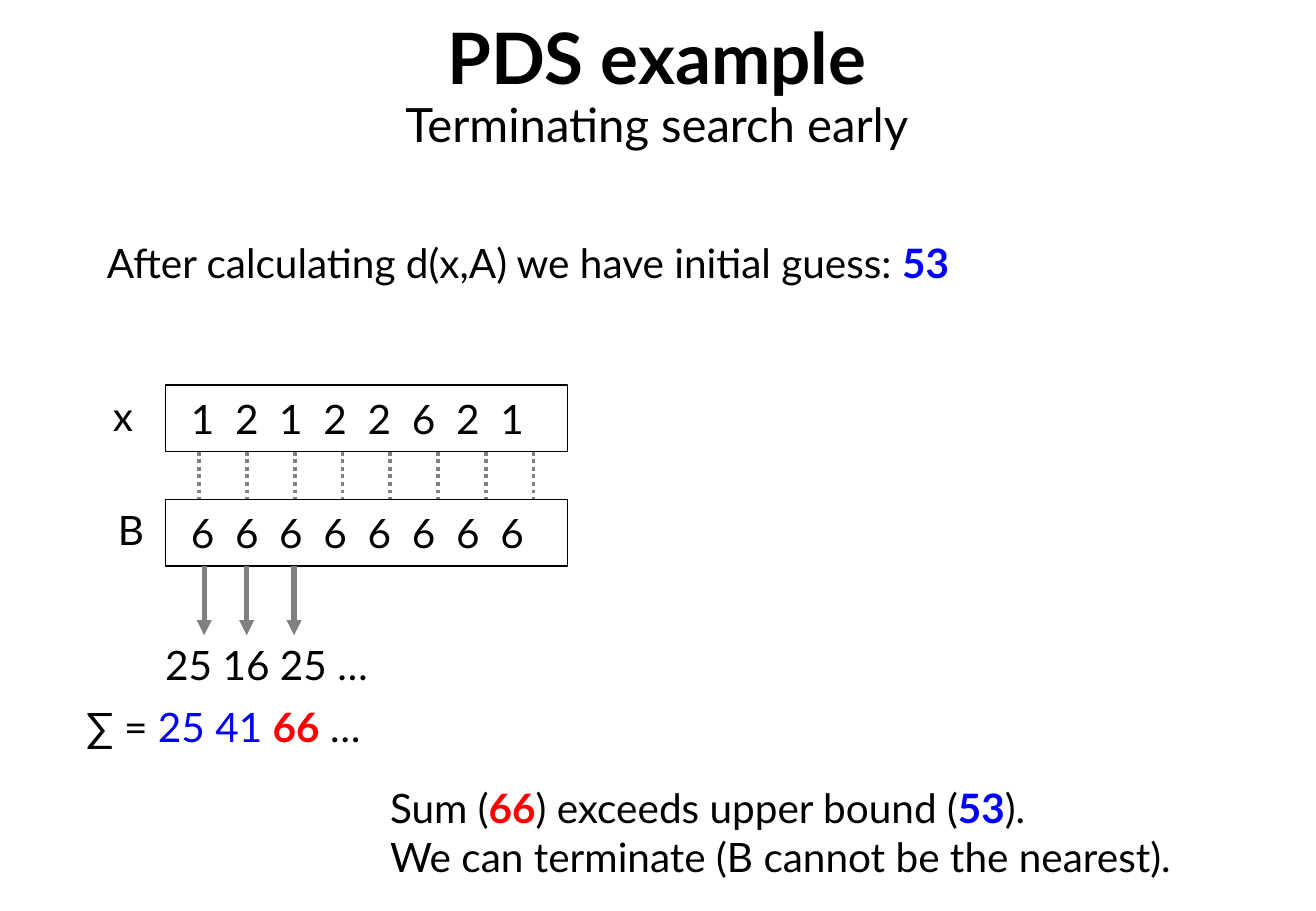
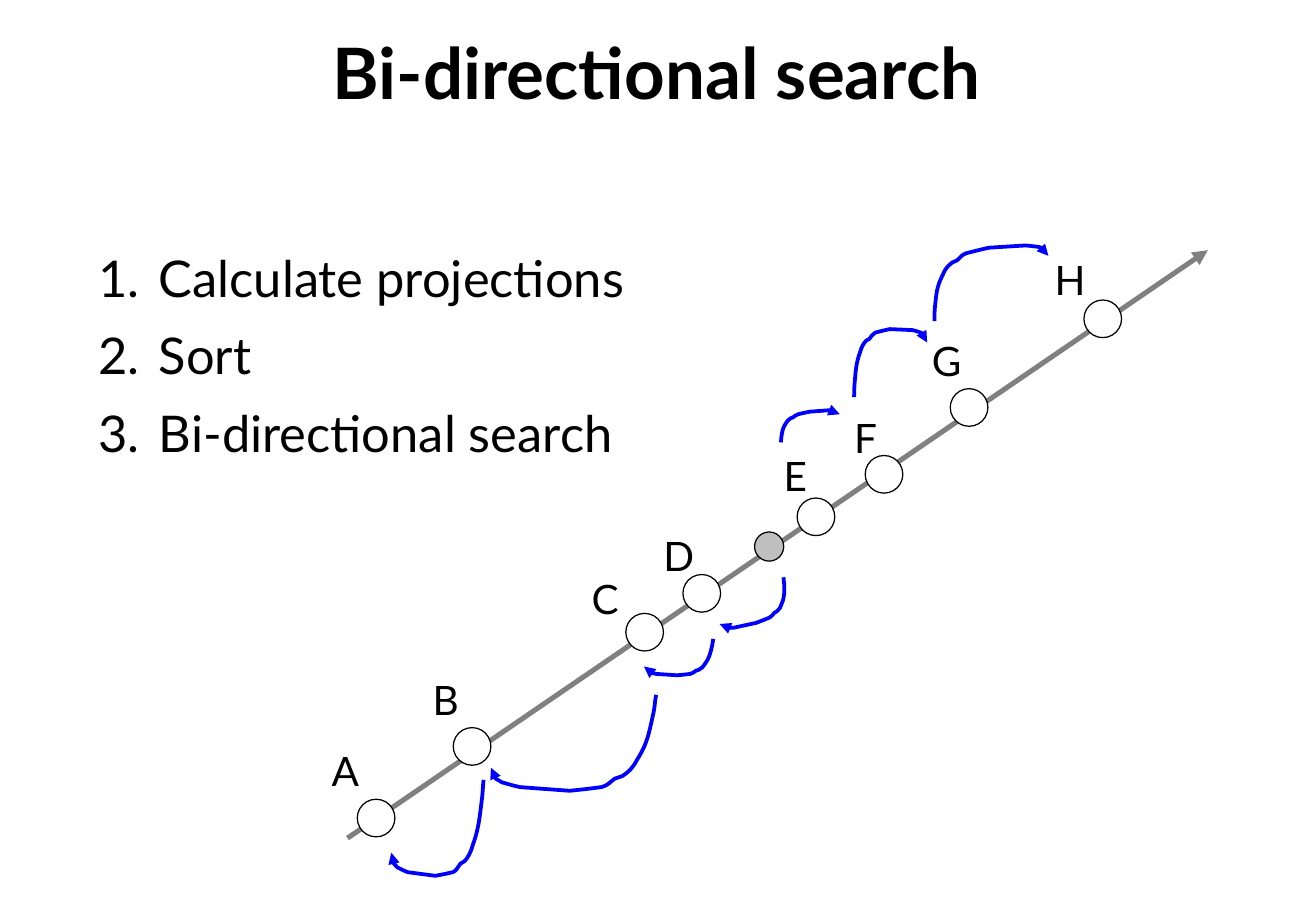
import lxml.etree
import pptx
import pptx.dml.color
import pptx.enum.dml
import pptx.enum.shapes
import pptx.enum.text
import pptx.oxml.ns
import pptx.util

Inches = pptx.util.Inches
Pt = pptx.util.Pt
hue = pptx.dml.color.RGBColor.from_string
qn = pptx.oxml.ns.qn
sub = lxml.etree.SubElement
Shape = pptx.enum.shapes.MSO_SHAPE
Anchor = pptx.enum.text.MSO_ANCHOR
Align = pptx.enum.text.PP_ALIGN
DOTS = pptx.enum.dml.MSO_LINE.ROUND_DOT
STRAIGHT = pptx.enum.shapes.MSO_CONNECTOR.STRAIGHT

FONT = "Lato"
BLACK, WHITE, GRAY, PALE = "000000", "FFFFFF", "808080", "BFBFBF"
BLUE, RED = "0000FF", "FF0000"


def write(box, paras, size=24, bold=False, align=Align.LEFT, anchor=Anchor.TOP,
          inset=(0, 0), space=None, after=0, stops=(), number=False):
    """Each paragraph is a string or a list of (text, format) runs."""
    frame = box.text_frame
    frame.word_wrap = True
    frame.auto_size = pptx.enum.text.MSO_AUTO_SIZE.NONE
    frame.vertical_anchor = anchor
    frame.margin_left = frame.margin_right = Inches(inset[0])
    frame.margin_top = frame.margin_bottom = Inches(inset[1])
    for i, runs in enumerate(paras):
        para = frame.add_paragraph() if i else frame.paragraphs[0]
        para.alignment = align
        para.line_spacing = space
        if i < len(paras) - 1:
            para.space_after = Pt(after)
        for text, form in [(runs, {})] if isinstance(runs, str) else runs:
            if form.get("newline"):
                para.add_line_break()
            run = para.add_run()
            run.text = text
            run.font.name = FONT
            run.font.size = Pt(form.get("size", size))
            run.font.bold = form.get("bold", bold)
            run.font.color.rgb = hue(form.get("color", BLACK))
        props = para._p.get_or_add_pPr()
        if number:
            props.set("marL", str(Inches(0.5)))
            props.set("indent", str(-Inches(0.5)))
            sub(props, qn("a:buFont"), typeface="+mj-lt")
            sub(props, qn("a:buAutoNum"), type="arabicPeriod")
        if stops:
            tabs = sub(props, qn("a:tabLst"))
            for stop in stops:
                sub(tabs, qn("a:tab"), pos=str(Inches(stop)), algn="l")


def ink(shape, color=BLACK, width=0.75, dash=None, arrow=False):
    """Outline a shape or connector and remove its shadow."""
    shape.line.color.rgb = hue(color)
    shape.line.width = Pt(width)
    if dash:
        shape.line.dash_style = dash
    props = shape._element.spPr
    if arrow:
        sub(props.find(qn("a:ln")), qn("a:tailEnd"), type="triangle")
    sub(props, qn("a:effectLst"))


deck = pptx.Presentation()
deck.slide_width, deck.slide_height = Inches(10.83), Inches(7.5)

# Slides and titles
heads = [
    (0.17, 1.1, [("PDS example", {}),
                 ("Terminating search early", {"size": 28, "bold": False, "newline": True})]),
    (0.29, 0.66, "Bi-directional search"),
]
for top, high, words in heads:
    title = deck.slides.add_slide(deck.slide_layouts[5]).shapes.title
    title.left, title.top = Inches(0.76), Inches(top)
    title.width, title.height = Inches(9.29), Inches(high)
    write(title, [words], size=42, bold=True, align=Align.CENTER,
          anchor=Anchor.MIDDLE, space=0.93)
early, both = [slide.shapes for slide in deck.slides]

# Early stop: the two vectors
pitch = 0.364
rows = [("x", 0.93, 3.17, "12122621"), ("B", 0.97, 4.11, "66666666")]
for name, left, top, digits in rows:
    frame = early.add_shape(Shape.RECTANGLE, Inches(1.36), Inches(top), Inches(3.31), Inches(0.55))
    frame.fill.background()
    ink(frame)
    box = early.add_textbox(Inches(1.57), Inches(top + 0.07), Inches(2.95), Inches(0.4))
    write(box, ["\t".join(digits)], stops=[pitch * i for i in range(1, len(digits))])
    box = early.add_textbox(Inches(left), Inches(top + 0.05), Inches(0.3), Inches(0.4))
    write(box, [name])

# Early stop: dotted pairs and arrows to the squares
links = [(1.64 + 0.393 * i, 3.72, 4.11, {"width": 2.25, "dash": DOTS}) for i in range(8)]
links += [(x, 4.66, 5.23, {"width": 3, "arrow": True}) for x in (1.68, 2.03, 2.42)]
for x, top, end, form in links:
    link = early.add_connector(STRAIGHT, Inches(x), Inches(top), Inches(x), Inches(end))
    ink(link, GRAY, **form)

# Early stop: guess, squares, sums and verdict
guess = ("53", {"color": BLUE, "bold": True})
over = ("66", {"color": RED, "bold": True})
notes = [
    (0.88, 1.96, 7.36, 0.4, (0, 0),
     [[("After calculating d(x,A) we have initial guess: ", {}), guess]]),
    (1.36, 5.27, 2.39, 0.4, (0, 0), ["25 16 25 …"]),
    (0.61, 5.73, 5.42, 0.5, (0.1, 0.05),
     [[("∑ = ", {}), ("25 41 ", {"color": BLUE}), over, (" …", {})]]),
    (3.21, 6.45, 6.65, 0.81, (0, 0),
     [[("Sum (", {}), over, (") exceeds upper bound (", {}), guess, (").", {})],
      "We can terminate (B cannot be the nearest)."]),
]
for left, top, wide, high, inset, paras in notes:
    box = early.add_textbox(Inches(left), Inches(top), Inches(wide), Inches(high))
    write(box, paras, inset=inset)

# Two-way search: axis
axis = both.add_connector(STRAIGHT, Inches(2.86), Inches(6.9), Inches(9.94), Inches(2.06))
ink(axis, GRAY, 3, arrow=True)

# Two-way search: points with their labels, and the query
points = [
    ("A", 2.94, 6.58, 2.73, 6.14), ("B", 3.73, 5.99, 3.56, 5.56),
    ("C", 5.15, 5.05, 4.87, 4.73), ("D", 5.62, 4.73, 5.46, 4.37),
    ("E", 6.56, 4.1, 6.45, 3.71), ("F", 7.12, 3.75, 7.03, 3.4),
    ("G", 7.82, 3.2, 7.67, 2.77), ("H", 8.92, 2.47, 8.68, 2.1),
]
dots = [(x, y, 0.31, WHITE) for _, x, y, _, _ in points] + [(6.21, 4.38, 0.24, PALE)]
for x, y, size, color in dots:
    dot = both.add_shape(Shape.OVAL, Inches(x), Inches(y), Inches(size), Inches(size))
    dot.fill.solid()
    dot.fill.fore_color.rgb = hue(color)
    ink(dot)
for name, _, _, x, y in points:
    write(both.add_textbox(Inches(x), Inches(y), Inches(0.3), Inches(0.4)), [name])

# Two-way search: steps
box = both.add_textbox(Inches(0.71), Inches(1.98), Inches(5), Inches(1.9))
write(box, ["Calculate projections", "Sort", "Bi-directional search"],
      size=30, inset=(0.1, 0.05), after=10, number=True)

# Two-way search: one hop curve, sized and turned for each jump
span, drop = 136, 79
curve = [
    (135, 5), (135, 9), (134, 14), (130, 32), (129, 40), (120, 54),
    (117, 60), (113, 64), (108, 67), (106, 68), (104, 68), (102, 69),
    (99, 71), (96, 75), (91, 76), (75, 78), (84, 77), (65, 79),
    (51, 78), (37, 77), (24, 76), (19, 75), (9, 72), (9, 72),
    (8, 71), (5, 70), (4, 69), (3, 67), (3, 65), (2, 63),
    (2, 62), (1, 61), (0, 60),
]
hops = [
    (5.89, 4.83, 0.61, 0.3, 344.2), (7.65, 2.04, 1, 0.54, 172.5),
    (7.01, 2.71, 0.63, 0.54, 176.3), (6.41, 3.39, 0.51, 0.22, 172.5),
    (5.3, 5.26, 0.57, 0.3, 0), (4.04, 5.72, 1.36, 0.79, 0),
    (3.22, 6.42, 0.76, 0.79, 0),
]
for left, top, wide, high, turn in hops:
    pen = both.build_freeform(span, 0, scale=(Inches(wide) / span, Inches(high) / drop))
    pen.add_line_segments(curve, close=False)
    hop = pen.convert_to_shape(Inches(left), Inches(top))
    hop.rotation = turn
    hop.fill.background()
    # Each three straight segments become one Bezier segment
    lines = list(hop._element.iter(qn("a:lnTo")))
    for i in range(0, len(lines), 3):
        bend = sub(lines[i].getparent(), qn("a:cubicBezTo"))
        for line in lines[i:i + 3]:
            bend.append(line[0])
            line.getparent().remove(line)
    ink(hop, BLUE, 2.25, arrow=True)

deck.save("out.pptx")
